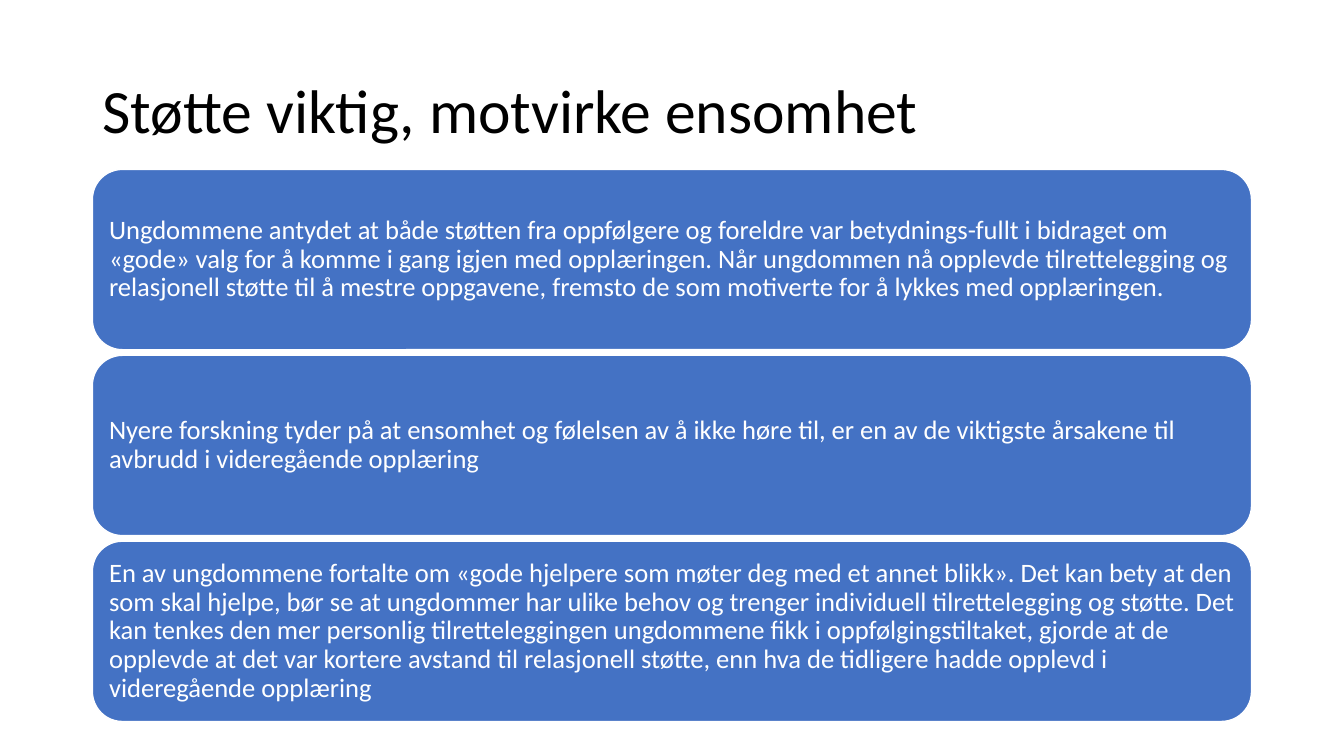
from pptx import Presentation
from pptx.dml.color import RGBColor
from pptx.enum.shapes import MSO_SHAPE
from pptx.enum.text import MSO_ANCHOR, PP_ALIGN
from pptx.util import Pt

ROUNDED = MSO_SHAPE.ROUNDED_RECTANGLE
MIDDLE = MSO_ANCHOR.MIDDLE
LEFT = PP_ALIGN.LEFT

COLORS = {"title": "000000", "card": "4472C4", "white": "FFFFFF"}
MARGIN, WIDTH = 66, 828
CARD_TOP, CARD_HEIGHT, CARD_STEP = 121, 128.8, 132.8

CARDS = [
    "Ungdommene antydet at både støtten fra oppfølgere og foreldre var "
    "betydnings-fullt i bidraget om «gode» valg for å komme i gang igjen med "
    "opplæringen. Når ungdommen nå opplevde tilrettelegging og relasjonell "
    "støtte til å mestre oppgavene, fremsto de som motiverte for å lykkes med "
    "opplæringen.",
    "Nyere forskning tyder på at ensomhet og følelsen av å ikke høre til, er en "
    "av de viktigste årsakene til avbrudd i videregående opplæring",
    "En av ungdommene fortalte om «gode hjelpere som møter deg med et annet "
    "blikk». Det kan bety at den som skal hjelpe, bør se at ungdommer har ulike "
    "behov og trenger individuell tilrettelegging og støtte. Det kan tenkes den "
    "mer personlig tilretteleggingen ungdommene fikk i oppfølgingstiltaket, "
    "gjorde at de opplevde at det var kortere avstand til relasjonell støtte, "
    "enn hva de tidligere hadde opplevd i videregående opplæring",
]


def write_text(tf, text, size, color):
    tf.word_wrap = True
    tf.vertical_anchor = MIDDLE
    p = tf.paragraphs[0]
    p.text = text
    p.alignment = LEFT
    p.line_spacing = 0.9
    p.font.name = "Calibri"
    p.font.size = Pt(size)
    p.font.color.rgb = RGBColor.from_string(COLORS[color])


prs = Presentation()
prs.slide_width, prs.slide_height = Pt(960), Pt(540)
s = prs.slides.add_slide(prs.slide_layouts[5])

title = s.shapes.title
title.left, title.top = Pt(MARGIN), Pt(28.8)
title.width, title.height = Pt(WIDTH), Pt(104.4)
write_text(title.text_frame, "Støtte viktig, motvirke ensomhet", 44, "title")

for i, text in enumerate(CARDS):
    sp = s.shapes.add_shape(ROUNDED, Pt(MARGIN), Pt(CARD_TOP + i * CARD_STEP),
                            Pt(WIDTH), Pt(CARD_HEIGHT))
    sp.shadow.inherit = False
    sp.fill.solid()
    sp.fill.fore_color.rgb = RGBColor.from_string(COLORS["card"])
    sp.line.color.rgb = RGBColor.from_string(COLORS["white"])
    sp.line.width = Pt(1)
    tf = sp.text_frame
    tf.margin_left = tf.margin_right = tf.margin_top = tf.margin_bottom = Pt(5.7)
    write_text(tf, text, 19, "white")

prs.save("out.pptx")
